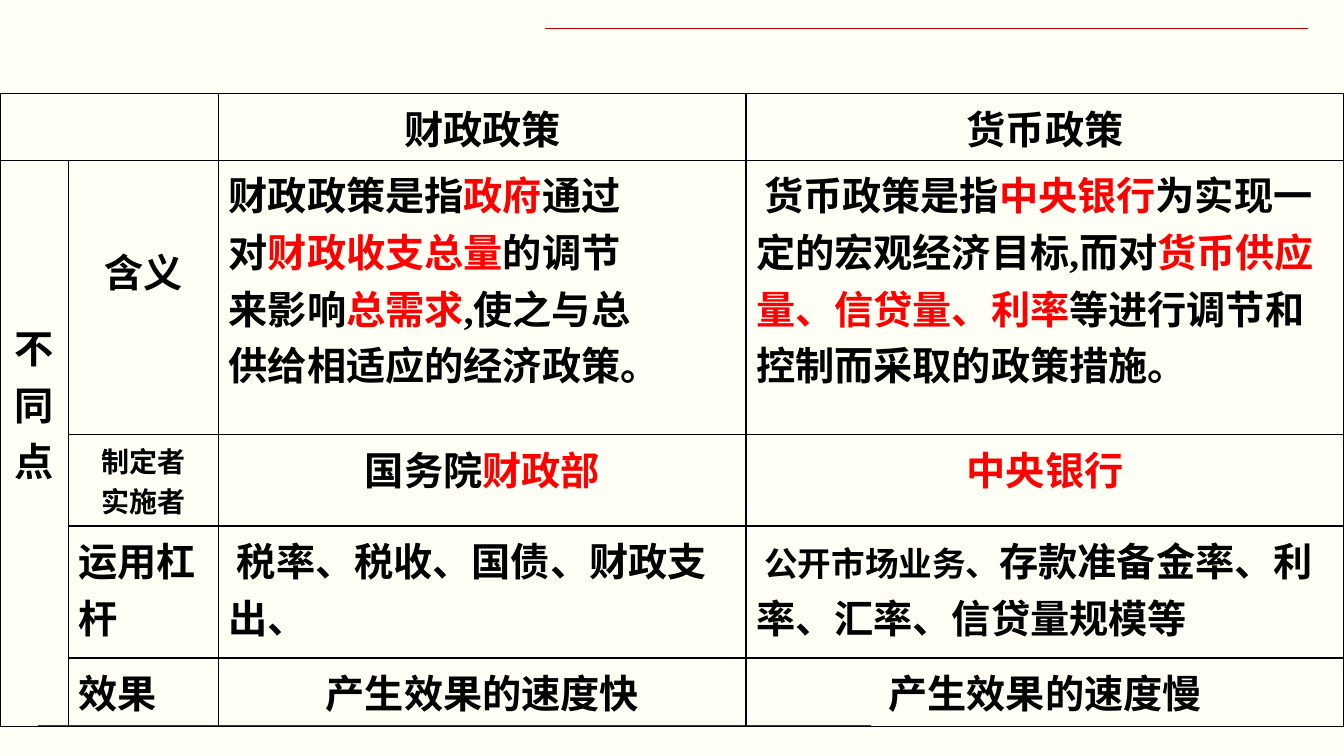
from lxml import etree
from pptx import Presentation
from pptx.dml.color import RGBColor
from pptx.enum.shapes import MSO_CONNECTOR
from pptx.enum.text import MSO_ANCHOR, PP_ALIGN as AL
from pptx.oxml import parse_xml
from pptx.oxml.ns import nsdecls, qn
from pptx.util import Inches, Pt

CREAM = RGBColor(0xFF, 0xFF, 0xF5)
BLACK = RGBColor(0, 0, 0)
RED = RGBColor(0xFF, 0, 0)
DARK_RED = RGBColor(0xC0, 0, 0)


def write(cell, text, size=28, align=AL.LEFT, indent=0, lead="", bottom=0.05):
    """Write one paragraph per line; words between asterisks turn red."""
    tf = cell.text_frame
    cell.margin_bottom = Inches(bottom)
    for i, line in enumerate(text.split("\n")):
        p = tf.paragraphs[0] if i == 0 else tf.add_paragraph()
        p.alignment = align
        if indent:
            p._p.get_or_add_pPr().set("indent", str(Inches(indent)))
        runs = [(lead, 24, "Arial", BLACK)]
        for n, part in enumerate(line.split("*")):
            runs.append((part, size, "Times New Roman", RED if n % 2 else BLACK))
        for words, pts, font, color in runs:
            if words:
                r = p.add_run()
                r.text = words
                r.font.size, r.font.name, r.font.bold = Pt(pts), font, True
                r.font.color.rgb = color


prs = Presentation()
prs.slide_width, prs.slide_height = Inches(13.33), Inches(7.5)
s = prs.slides.add_slide(prs.slide_layouts[6])
s.background.fill.solid()
s.background.fill.fore_color.rgb = CREAM

# Thin rules at top and bottom
for x1, x2, y in [(5.41, 12.97, 0.28), (0.38, 8.64, 7.2)]:
    rule = s.shapes.add_connector(MSO_CONNECTOR.STRAIGHT, Inches(x1), Inches(y),
                                  Inches(x2), Inches(y))
    rule.line.color.rgb = DARK_RED
    rule.line.width = Pt(0.5)
    etree.SubElement(rule._element.spPr, qn("a:effectLst"))

# Table grid
cols = [0.68, 1.49, 5.23, 5.93]
rows = [0.66, 2.72, 0.9, 1.31, 0.68]
table = s.shapes.add_table(len(rows), len(cols), 0, Inches(0.93),
                           Inches(sum(cols)), Inches(sum(rows))).table
table.first_row = table.horz_banding = False
for col, width in zip(table.columns, cols):
    col.width = Inches(width)
for row, height in zip(table.rows, rows):
    row.height = Inches(height)

# Black borders, no fill
for cell in table.iter_cells():
    tcPr = cell._tc.get_or_add_tcPr()
    for side in "LRTB":
        tcPr.append(parse_xml(
            f'<a:ln{side} {nsdecls("a")} w="12700"><a:solidFill>'
            f'<a:srgbClr val="{BLACK}"/></a:solidFill></a:ln{side}>'))
    cell.fill.background()

table.cell(0, 0).merge(table.cell(0, 1))
table.cell(1, 0).merge(table.cell(4, 0))

# Cell text: row, column, words, format
mid = {"align": AL.CENTER}
content = [
    (0, 2, "财政政策", mid),
    (0, 3, "货币政策", mid),
    (1, 0, "不同点", {"align": AL.CENTER, "bottom": 0.85}),
    (1, 1, "含义", {"align": AL.CENTER, "bottom": 0.59}),
    (1, 2, "财政政策是指*政府*通过\n对*财政收支总量*的调节\n"
           "来影响*总需求*,使之与总\n供给相适应的经济政策。", {}),
    (1, 3, "货币政策是指*中央银行*为实现一定的宏观经济目标,而对"
           "*货币供应量、信贷量、利率*等进行调节和控制而采取的政策措施。",
     {"indent": 0.08}),
    (2, 1, "制定者\n实施者", {"align": AL.CENTER, "size": 20}),
    (2, 2, "国务院*财政部*", mid),
    (2, 3, "*中央银行*", mid),
    (3, 1, "运用杠杆", {}),
    (3, 2, "税率、税收、国债、财政支出、", {"indent": 0.08}),
    (3, 3, "存款准备金率、利率、汇率、信贷量规模等",
     {"indent": 0.08, "lead": "公开市场业务、"}),
    (4, 1, "效果", {}),
    (4, 2, "产生效果的速度快", mid),
    (4, 3, "产生效果的速度慢", mid),
]
for r, c, text, style in content:
    write(table.cell(r, c), text, **style)
for r, c in [(1, 0), (1, 1)]:
    table.cell(r, c).vertical_anchor = MSO_ANCHOR.MIDDLE

prs.save("out.pptx")
